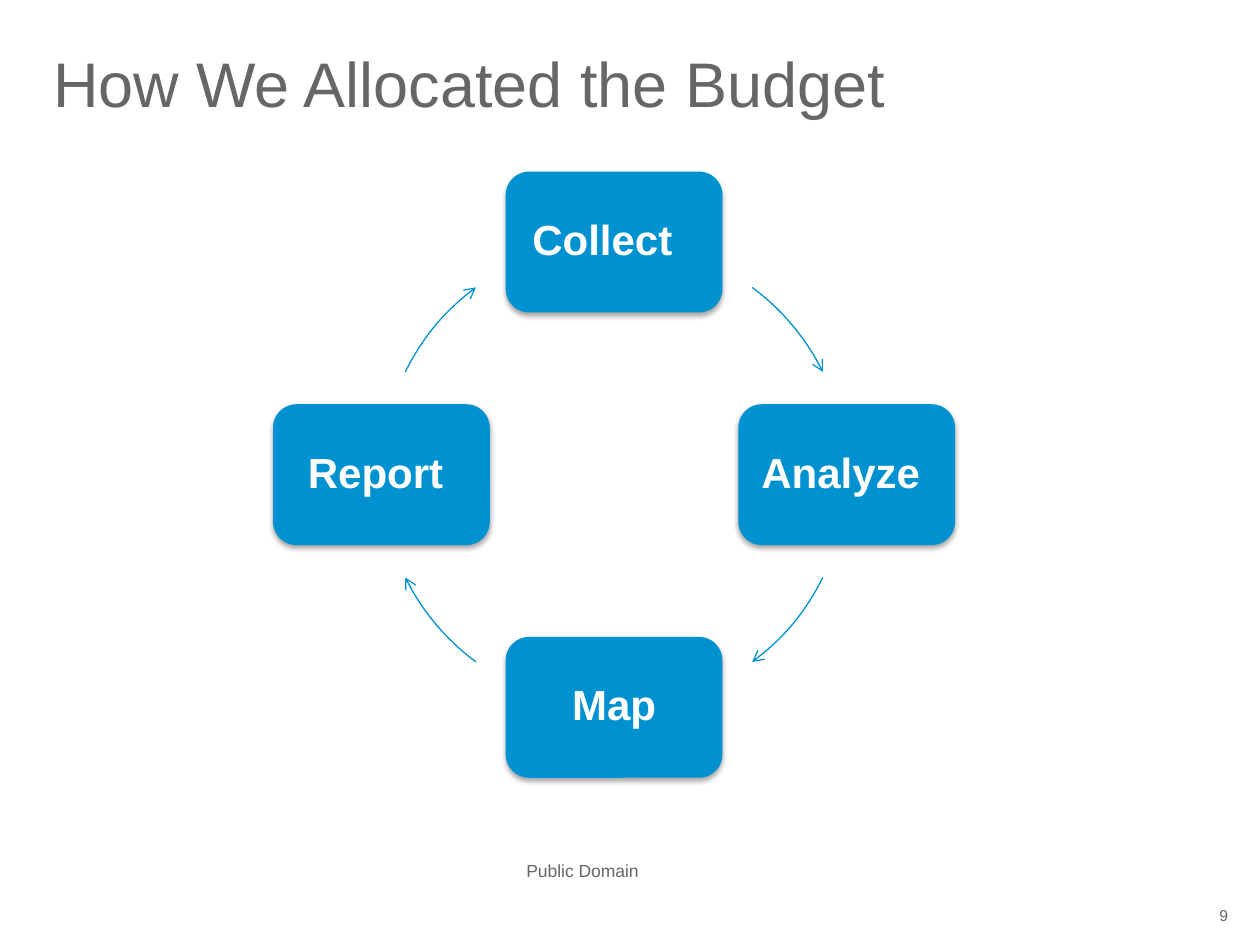
import math

import lxml.etree
import pptx
import pptx.dml.color
import pptx.enum.shapes
import pptx.enum.text
import pptx.oxml.ns
import pptx.util

Cm = pptx.util.Cm
Pt = pptx.util.Pt
RGBColor = pptx.dml.color.RGBColor
Align = pptx.enum.text.PP_ALIGN
Anchor = pptx.enum.text.MSO_ANCHOR
Preset = pptx.enum.shapes.MSO_SHAPE
qn = pptx.oxml.ns.qn

BLUE = RGBColor(0x00, 0x92, 0xD0)
GRAY = RGBColor(0x66, 0x66, 0x66)
WHITE = RGBColor(0xFF, 0xFF, 0xFF)

TITLE = "How We Allocated the Budget"
FOOTER = "Public Domain"
SLIDE_NUMBER = "9"
STAGES = [
    {"label": "Collect", "angle": 270, "extra_right": 0.47, "arrow": (306.4, 333.8)},
    {"label": "Analyze", "angle": 0, "extra_right": 0.24, "arrow": (26.2, 53.6)},
    {"label": "Map", "angle": 90, "extra_right": 0, "arrow": (126.4, 153.8)},
    {"label": "Report", "angle": 180, "extra_right": 0.24, "arrow": (206.2, 233.6)},
]
CENTER_X, CENTER_Y, RADIUS = 12.38, 9.57, 4.69
BOX_WIDTH, BOX_HEIGHT = 4.37, 2.84
INSET = 0.25


def write(text_frame, text, size, color, align=Align.LEFT, bold=False, spacing=None):
    text_frame.text = text
    paragraph = text_frame.paragraphs[0]
    paragraph.alignment = align
    if spacing:
        paragraph.line_spacing = spacing
    font = paragraph.runs[0].font
    font.name, font.size, font.bold = "Arial", Pt(size), bold
    font.color.rgb = color


def set_margins(text_frame, left, top, right, bottom):
    text_frame.margin_left, text_frame.margin_top = Cm(left), Cm(top)
    text_frame.margin_right, text_frame.margin_bottom = Cm(right), Cm(bottom)


def add_soft_shadow(shape):
    shape.shadow.inherit = False
    effects = shape.element.spPr.find(qn("a:effectLst"))
    shadow = lxml.etree.SubElement(
        effects, qn("a:outerShdw"), blurRad=str(Pt(3.1)), dist=str(Pt(1.8)),
        dir="5400000", rotWithShape="0")
    color = lxml.etree.SubElement(shadow, qn("a:srgbClr"), val="000000")
    lxml.etree.SubElement(color, qn("a:alpha"), val="35000")


def add_stage(slide, stage):
    angle = math.radians(stage["angle"])
    left = CENTER_X + RADIUS * math.cos(angle) - BOX_WIDTH / 2
    top = CENTER_Y + RADIUS * math.sin(angle) - BOX_HEIGHT / 2
    box = slide.shapes.add_shape(
        Preset.ROUNDED_RECTANGLE, Cm(left), Cm(top), Cm(BOX_WIDTH), Cm(BOX_HEIGHT))
    box.fill.solid()
    box.fill.fore_color.rgb = BLUE
    box.line.fill.background()
    add_soft_shadow(box)
    set_margins(box.text_frame, INSET, INSET, INSET + stage["extra_right"], INSET)
    box.text_frame.vertical_anchor = Anchor.MIDDLE
    write(box.text_frame, stage["label"], 24, WHITE, Align.CENTER, True, 0.9)


def add_cycle_arrow(slide, start, end):
    arc = slide.shapes.add_shape(
        Preset.ARC, Cm(CENTER_X - RADIUS), Cm(CENTER_Y - RADIUS),
        Cm(2 * RADIUS), Cm(2 * RADIUS))
    arc.adjustments[0] = start * 0.6
    arc.adjustments[1] = end * 0.6
    arc.fill.background()
    arc.shadow.inherit = False
    arc.line.color.rgb = BLUE
    arc.line.width = Pt(0.75)
    lxml.etree.SubElement(arc.element.spPr.find(qn("a:ln")), qn("a:tailEnd"), type="arrow")


def main():
    presentation = pptx.Presentation()
    presentation.slide_width, presentation.slide_height = Cm(25.4), Cm(19.05)
    slide = presentation.slides.add_slide(presentation.slide_layouts[5])

    title = slide.shapes.title
    title.left, title.top, title.width, title.height = Cm(1.07), Cm(1.07), Cm(23.24), Cm(2.67)
    set_margins(title.text_frame, 0, 0, 0, 0)
    title.text_frame.vertical_anchor = Anchor.TOP
    title.text_frame.auto_size = pptx.enum.text.MSO_AUTO_SIZE.NONE
    write(title.text_frame, TITLE, 36, GRAY, spacing=0.9)

    footer = slide.shapes.add_textbox(Cm(10.36), Cm(17.22), Cm(2.79), Cm(0.69))
    footer.text_frame.word_wrap = False
    write(footer.text_frame, FOOTER, 10, GRAY)

    number = slide.shapes.add_textbox(Cm(23.44), Cm(18.19), Cm(1.32), Cm(0.51))
    number.text_frame.word_wrap = True
    set_margins(number.text_frame, 0, 0, 0, 0)
    number.text_frame.vertical_anchor = Anchor.MIDDLE
    write(number.text_frame, SLIDE_NUMBER, 9, GRAY, Align.RIGHT)

    for stage in STAGES:
        add_stage(slide, stage)
        add_cycle_arrow(slide, *stage["arrow"])

    presentation.save("out.pptx")


if __name__ == "__main__":
    main()
